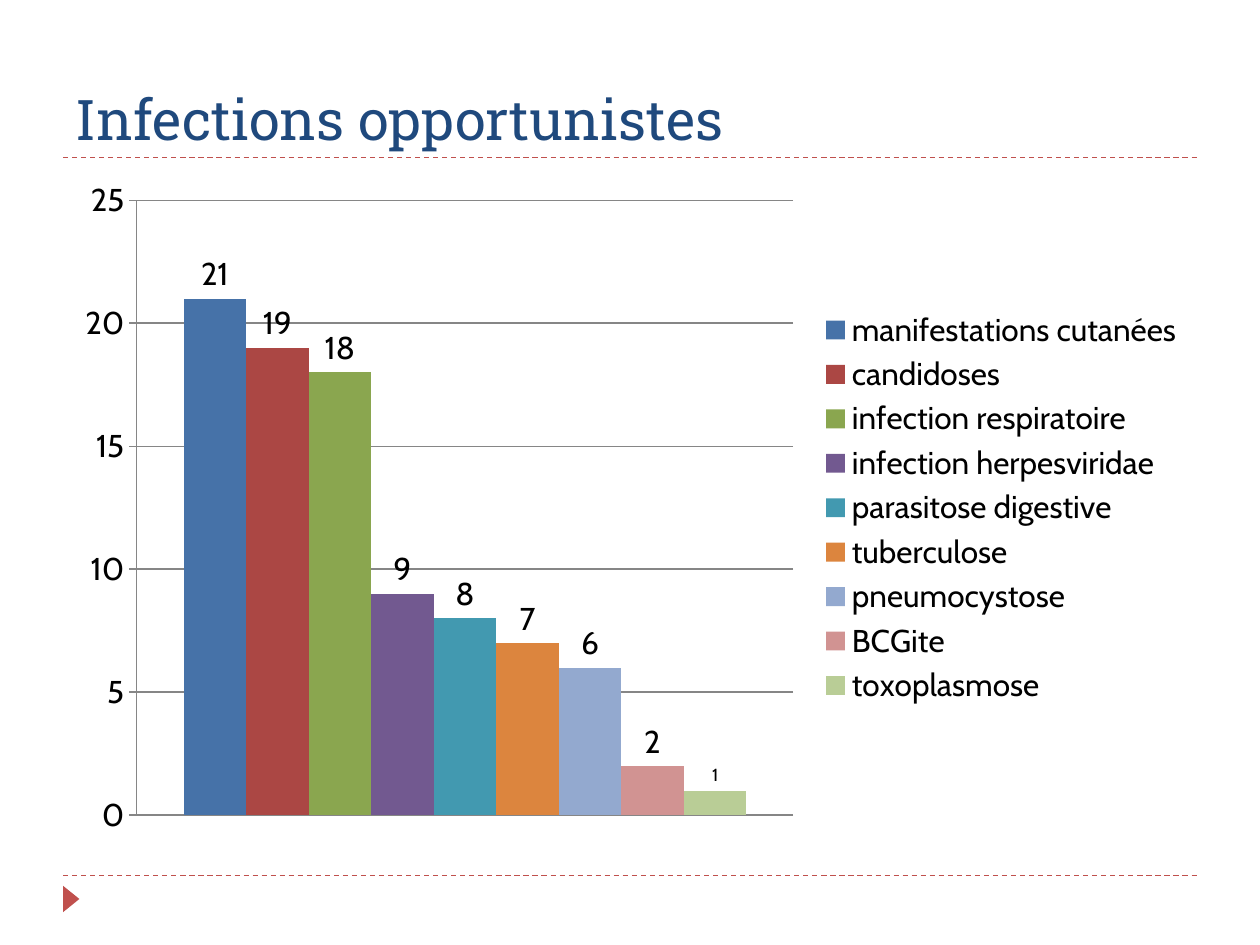
from lxml.etree import SubElement
from pptx import Presentation
from pptx.chart.data import CategoryChartData
from pptx.dml.color import RGBColor
from pptx.enum.chart import XL_CHART_TYPE, XL_LABEL_POSITION, XL_LEGEND_POSITION, XL_TICK_MARK
from pptx.enum.dml import MSO_LINE
from pptx.enum.shapes import MSO_CONNECTOR, MSO_SHAPE
from pptx.enum.text import MSO_ANCHOR
from pptx.oxml.ns import qn
from pptx.util import Inches, Pt

ACCENT = "C0504D"
GRID = "868686"
INFECTIONS = [
    ("manifestations cutanées", 21, "4672A8"),
    ("candidoses", 19, "AB4744"),
    ("infection respiratoire", 18, "8AA64F"),
    ("infection herpesviridae", 9, "725990"),
    ("parasitose digestive", 8, "4299B0"),
    ("tuberculose", 7, "DC853E"),
    ("pneumocystose", 6, "93A9CF"),
    ("BCGite", 2, "D19392"),
    ("toxoplasmose", 1, "B9CD96"),
]


def color(value):
    return RGBColor.from_string(value)


def apply(target, values):
    for name, value in values.items():
        setattr(target, name, value)


def style_font(font, name, size, value):
    apply(font, {"name": name, "size": Pt(size)})
    font.color.rgb = color(value)


def add_rule(page, left, top, width):
    rule = page.shapes.add_connector(
        MSO_CONNECTOR.STRAIGHT, Inches(left), Inches(top), Inches(left + width), Inches(top)
    )
    rule.line.color.rgb = color(ACCENT)
    apply(rule.line, {"width": Pt(0.75), "dash_style": MSO_LINE.DASH})
    SubElement(rule._element.spPr, qn("a:effectLst"))


def add_title(page, left, top, width, height):
    box = page.shapes.add_textbox(Inches(left), Inches(top), Inches(width), Inches(height))
    apply(box.text_frame, {"word_wrap": True, "vertical_anchor": MSO_ANCHOR.BOTTOM})
    span = box.text_frame.paragraphs[0].add_run()
    span.text = "Infections opportunistes"
    style_font(span.font, "Roboto Slab", 32, "1F497D")
    add_rule(page, left, top + height, width)


def add_footer(page, left, top, width):
    add_rule(page, left, top, width)
    marker = page.shapes.add_shape(
        MSO_SHAPE.ISOSCELES_TRIANGLE,
        Inches(left - 0.04), Inches(top + 0.12), Inches(0.21), Inches(0.13),
    )
    marker.rotation = 90
    marker.shadow.inherit = False
    marker.fill.solid()
    marker.fill.fore_color.rgb = color(ACCENT)
    marker.line.fill.background()


def place_plot(chart, **shares):
    area = chart._chartSpace.chart.plotArea
    layout = area.find(qn("c:layout"))
    if layout is None:
        layout = area.makeelement(qn("c:layout"))
        area.insert(0, layout)
    manual = SubElement(layout, qn("c:manualLayout"))
    settings = {"layoutTarget": "inner", "xMode": "edge", "yMode": "edge", **shares}
    for name, value in settings.items():
        SubElement(manual, qn(f"c:{name}")).set("val", str(value))


def add_infection_chart(page, left, top, width, height):
    data = CategoryChartData()
    data.categories = ["1"]
    for name, count, _ in INFECTIONS:
        data.add_series(name, [count])
    chart = page.shapes.add_chart(
        XL_CHART_TYPE.COLUMN_CLUSTERED,
        Inches(left), Inches(top), Inches(width), Inches(height), data,
    ).chart
    style_font(chart.font, "Cabin", 18, "000000")
    apply(chart, {"has_title": False, "has_legend": True})
    apply(chart.legend, {"position": XL_LEGEND_POSITION.RIGHT, "include_in_layout": False})
    place_plot(chart, x=0.065, y=0.048, w=0.579, h=0.904)

    chart.category_axis.visible = False
    axis = chart.value_axis
    apply(axis, {
        "minimum_scale": 0, "maximum_scale": 25, "major_unit": 5,
        "has_major_gridlines": True, "major_tick_mark": XL_TICK_MARK.CROSS,
    })
    for line in (axis.format.line, axis.major_gridlines.format.line):
        line.color.rgb = color(GRID)
        line.width = Pt(0.75)

    plot = chart.plots[0]
    apply(plot, {"gap_width": 150, "overlap": 0, "vary_by_categories": False})
    for series, (_, count, fill) in zip(plot.series, INFECTIONS):
        series.format.fill.solid()
        series.format.fill.fore_color.rgb = color(fill)
        labels = series.data_labels
        apply(labels, {"show_value": True, "position": XL_LABEL_POSITION.OUTSIDE_END})
        style_font(labels.font, "Cabin", 10 if count == 1 else 18, "000000")


def main():
    deck = Presentation()
    apply(deck, {"slide_width": Inches(10), "slide_height": Inches(7.5)})
    page = deck.slides.add_slide(deck.slide_layouts[6])
    add_footer(page, 0.5, 6.95, 9)
    add_title(page, 0.5, 0.17, 9, 1.08)
    add_infection_chart(page, 0.5, 1.33, 9, 5.4)
    deck.save("out.pptx")


if __name__ == "__main__":
    main()
